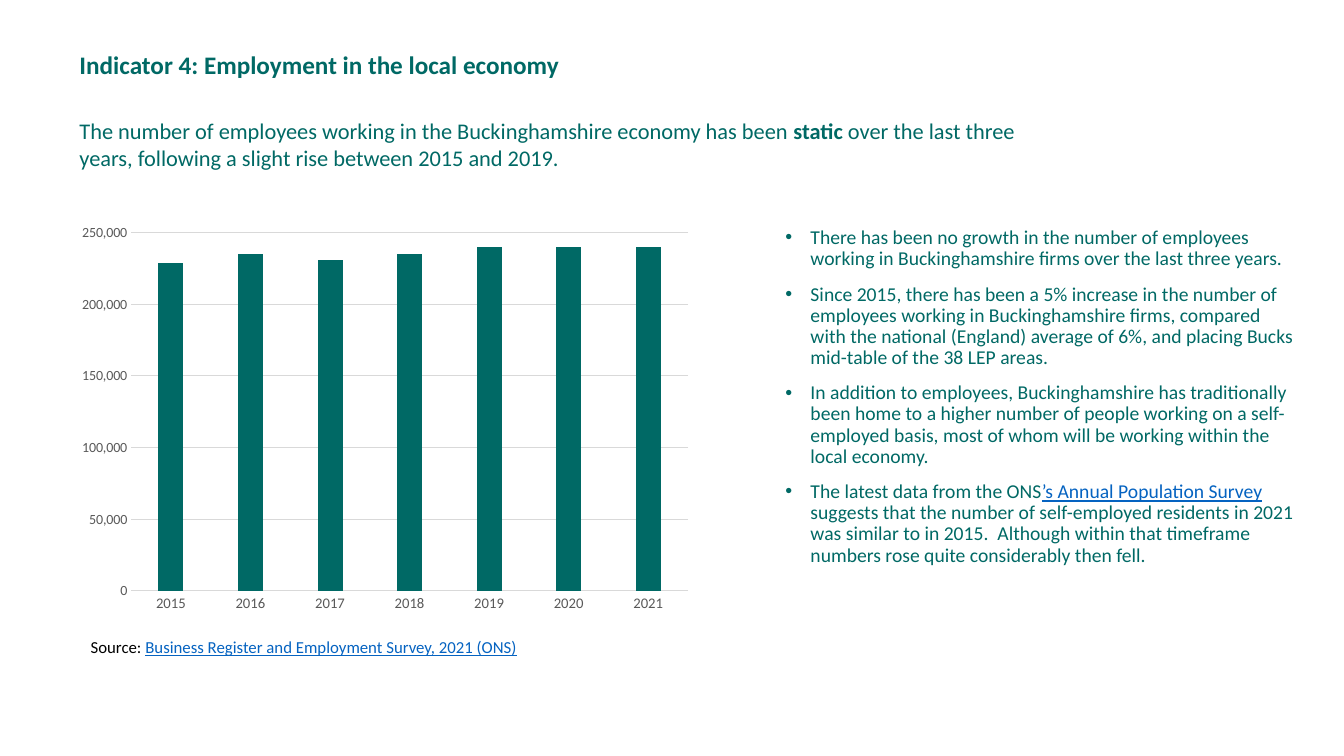
from dataclasses import dataclass

from lxml.etree import SubElement
from pptx import Presentation
from pptx.chart.data import CategoryChartData
from pptx.dml.color import RGBColor
from pptx.enum.chart import XL_CHART_TYPE, XL_LABEL_POSITION, XL_TICK_MARK
from pptx.oxml.ns import qn
from pptx.slide import Slide
from pptx.text.text import Font
from pptx.util import Inches, Pt

TEAL = RGBColor(0x00, 0x69, 0x65)
BLACK = RGBColor(0x00, 0x00, 0x00)
BLUE = RGBColor(0x05, 0x63, 0xC1)
GREY = RGBColor(0x59, 0x59, 0x59)
PALE = RGBColor(0xD9, 0xD9, 0xD9)
FACE = "Calibri"


@dataclass
class Part:
    text: str
    color: RGBColor = TEAL
    bold: bool = False
    under: bool = False


@dataclass
class Block:
    left: float
    top: float
    width: float
    height: float
    size: float
    paras: list[list[Part]]
    bullet: bool = False


BLOCKS = [
    # Title
    Block(0.69, 0.44, 8.07, 0.4, 18, [
        [Part("Indicator 4: Employment in the local economy", bold=True)],
    ]),
    # Source line
    Block(0.8, 6.27, 4.45, 0.3, 12, [
        [Part("Source: ", BLACK),
         Part("Business Register and Employment Survey, 2021 (ONS)", BLUE, under=True)],
    ]),
    # Key message
    Block(0.69, 1.11, 9.87, 0.64, 16, [
        [Part("The number of employees working in the Buckinghamshire economy has been "),
         Part("static", bold=True),
         Part(" over the last three years, following a slight rise between 2015 and 2019.")],
    ]),
    # Comments beside the chart
    Block(7.69, 2.21, 5.28, 4.03, 14, [
        [Part("There has been no growth in the number of employees working in "
              "Buckinghamshire firms over the last three years.")],
        [Part("Since 2015, there has been a 5% increase in the number of employees "
              "working in Buckinghamshire firms, compared with the national (England) "
              "average of 6%, and placing Bucks mid-table of the 38 LEP areas.")],
        [Part("In addition to employees, Buckinghamshire has traditionally been home "
              "to a higher number of people working on a self-employed basis, most of "
              "whom will be working within the local economy.")],
        [Part("The latest data from the ONS"),
         Part("’s Annual Population Survey ", BLUE, under=True),
         Part("suggests that the number of self-employed residents in 2021 was similar "
              "to in 2015.  Although within that timeframe numbers rose quite "
              "considerably then fell.")],
    ], bullet=True),
]

YEARS = [str(year) for year in range(2015, 2022)]
JOBS = [229000, 235000, 231000, 235000, 240000, 240000, 240000]


def style(font: Font, size: float, color: RGBColor) -> None:
    font.name = FACE
    font.size = Pt(size)
    font.color.rgb = color


def draw_block(slide: Slide, block: Block) -> None:
    box = slide.shapes.add_textbox(Inches(block.left), Inches(block.top),
                                   Inches(block.width), Inches(block.height))
    frame = box.text_frame
    frame.word_wrap = True
    for index, parts in enumerate(block.paras):
        para = frame.add_paragraph() if index else frame.paragraphs[0]
        for part in parts:
            run = para.add_run()
            run.text = part.text
            style(run.font, block.size, part.color)
            run.font.bold = part.bold
            run.font.underline = part.under
        if block.bullet:
            para.line_spacing = 0.9
            para.space_before = Pt(10)
            props = para._p.get_or_add_pPr()
            props.set("marL", str(Inches(0.25)))
            props.set("indent", str(Inches(-0.25)))
            SubElement(props, qn("a:buFont")).set("typeface", "Arial")
            SubElement(props, qn("a:buChar")).set("char", "•")


def draw_chart(slide: Slide) -> None:
    data = CategoryChartData(number_format="#,##0")
    data.categories = YEARS
    data.add_series("Series 1", JOBS)
    chart = slide.shapes.add_chart(XL_CHART_TYPE.COLUMN_CLUSTERED, Inches(0.69), Inches(2.15),
                                   Inches(6.26), Inches(4.01), data).chart
    chart.has_legend = False
    chart.has_title = False
    style(chart.font, 10, BLACK)

    # Columns
    plot = chart.plots[0]
    plot.vary_by_categories = False
    plot.gap_width = 219
    plot.overlap = -27
    fill = plot.series[0].format.fill
    fill.solid()
    fill.fore_color.rgb = TEAL

    # Axes and grid
    years, jobs = chart.category_axis, chart.value_axis
    for axis, size in ((years, 10.5), (jobs, 10)):
        axis.major_tick_mark = XL_TICK_MARK.NONE
        axis.minor_tick_mark = XL_TICK_MARK.NONE
        style(axis.tick_labels.font, size, GREY)
    jobs.minimum_scale = 0
    jobs.maximum_scale = 250000
    jobs.major_unit = 50000
    jobs.tick_labels.number_format = "#,##0"
    jobs.tick_labels.number_format_is_linked = False
    jobs.format.line.fill.background()
    jobs.has_major_gridlines = True
    for line in (years.format.line, jobs.major_gridlines.format.line):
        line.color.rgb = PALE
        line.width = Pt(0.75)


def main() -> None:
    deck = Presentation()
    deck.slide_width = Inches(13.33)
    deck.slide_height = Inches(7.5)
    slide = deck.slides.add_slide(deck.slide_layouts[6])
    draw_chart(slide)
    for block in BLOCKS:
        draw_block(slide, block)
    deck.save("out.pptx")


if __name__ == "__main__":
    main()
